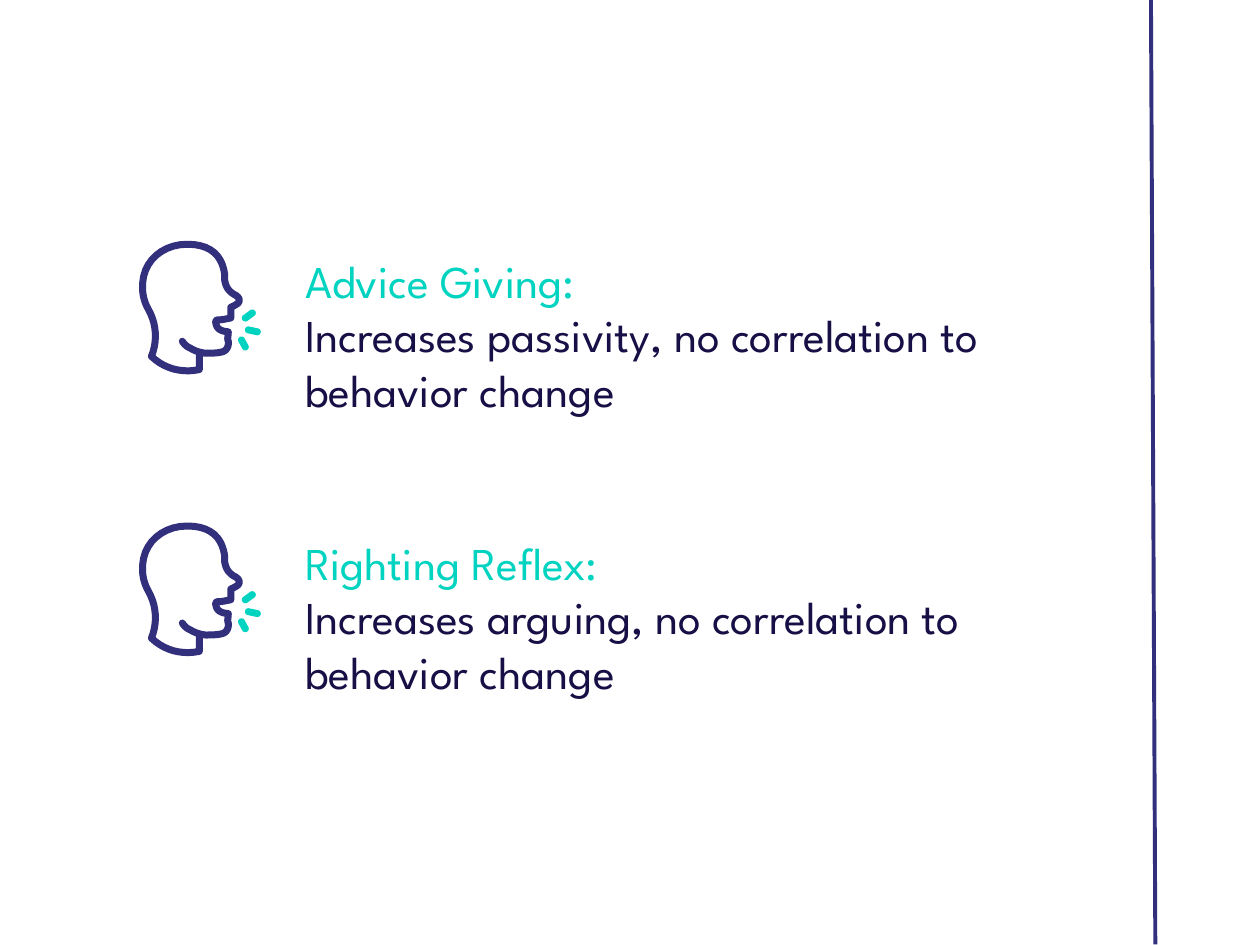
import math
from dataclasses import dataclass

from lxml import etree
from pptx import Presentation
from pptx.dml.color import RGBColor
from pptx.enum import shapes, text
from pptx.oxml import ns
from pptx.util import Pt


@dataclass(frozen=True)
class Theme:
    navy: RGBColor = RGBColor(0x32, 0x2F, 0x7C)
    teal: RGBColor = RGBColor(0x00, 0xD3, 0xC0)
    ink: RGBColor = RGBColor(0x17, 0x10, 0x46)
    font: str = "League Spartan"
    text_size: float = 26
    rule_width: float = 2.25
    icon_stroke: float = 4


THEME = Theme()

TOPICS = [
    ("Advice Giving:", "Increases passivity, no correlation to behavior change"),
    ("Righting Reflex:", "Increases arguing, no correlation to behavior change"),
]
FIRST_TOP, ROW_PITCH = 141, 161
TEXT_LEFT, TEXT_WIDTH, TEXT_HEIGHT = 167.3, 461, 101.5
ICON_LEFT, ICON_RISE = 78.3, 5

# Icon drawing: points in units of 0.72 pt from the icon's top left corner.
# A pair is a straight segment; six numbers are a Bezier segment.
ICON_UNIT = 0.72
HEAD_START = (36, 82)
HEAD_SEGMENTS = [
    # Jaw and chin
    (38, 85, 40, 86.5, 42.5, 87.5),
    (45.5, 89.5, 50, 91, 54.5, 91.5),
    (59, 91.5, 63, 91.5, 67.5, 90.5),
    (71, 89.5, 73, 86.5, 72.5, 82),
    # Open mouth
    (71.5, 80, 72.5, 78, 72.5, 74.5),
    (65, 74, 63, 71, 62.5, 67),
    (62.5, 65, 64, 65, 65, 65),
    (68, 65, 72, 64, 74.5, 63.5),
    (74.5, 55),
    # Nose and brow
    (77, 54, 78.5, 53, 80, 52),
    (81.5, 50.5, 81.5, 48.5, 80.5, 47.5),
    (80, 46.5, 79, 46, 78.5, 45.5),
    (73, 43, 70, 38.5, 69.5, 32),
    (69.5, 28),
    # Skull and neck
    (67.5, 15, 59.5, 5, 40, 5),
    (20.5, 5, 5.5, 18, 4.5, 36),
    (4, 43.5, 5.5, 50.5, 9, 56.5),
    (15.5, 68, 16.5, 81.5, 11.5, 94),
    (21.5, 103.5, 35, 107.5, 49.5, 104.5),
    (49.5, 93),
]
VOICE_RAYS = [
    [(88.5, 73), (95.5, 74.5)],
    [(83, 81), (86, 86.5)],
    [(86, 63.5), (91.5, 59.5)],
]


def trace(start, segments, steps=10):
    """Turn straight and Bezier segments into a list of points."""
    points = [start]
    for segment in segments:
        if len(segment) == 2:
            points.append(segment)
            continue
        x0, y0 = points[-1]
        x1, y1, x2, y2, x3, y3 = segment
        for step in range(1, steps + 1):
            t = step / steps
            a, b, c, d = (1 - t) ** 3, 3 * t * (1 - t) ** 2, 3 * t**2 * (1 - t), t**3
            points.append((a * x0 + b * x1 + c * x2 + d * x3,
                           a * y0 + b * y1 + c * y2 + d * y3))
    return points


def capsule(start, end, steps=10):
    """Outline a round-ended bar between two points."""
    radius = THEME.icon_stroke / ICON_UNIT / 2
    heading = math.atan2(end[1] - start[1], end[0] - start[0])
    points = []
    for (x, y), facing in ((end, heading), (start, heading + math.pi)):
        for step in range(steps + 1):
            angle = facing - math.pi / 2 + math.pi * step / steps
            points.append((x + radius * math.cos(angle), y + radius * math.sin(angle)))
    return points


def add_outline(icon, points, left, top, close):
    placed = [(Pt(left + x * ICON_UNIT), Pt(top + y * ICON_UNIT)) for x, y in points]
    builder = icon.shapes.build_freeform(*placed[0])
    builder.add_line_segments(placed[1:], close=close)
    outline = builder.convert_to_shape()
    outline.shadow.inherit = False
    return outline


def add_voice_ray(icon, ends, left, top):
    ray = add_outline(icon, capsule(*ends), left, top, close=True)
    ray.fill.solid()
    ray.fill.fore_color.rgb = THEME.teal
    ray.line.fill.background()


def add_head(icon, left, top):
    head = add_outline(icon, trace(HEAD_START, HEAD_SEGMENTS), left, top, close=False)
    head.fill.background()
    head.line.color.rgb = THEME.navy
    head.line.width = Pt(THEME.icon_stroke)
    stroke = head.line._get_or_add_ln()
    stroke.set("cap", "rnd")
    etree.SubElement(stroke, ns.qn("a:round"))


def add_speaker_icon(slide, left, top):
    icon = slide.shapes.add_group_shape()
    for ends in VOICE_RAYS:
        add_voice_ray(icon, ends, left, top)
    add_head(icon, left, top)


def add_topic_text(slide, top, heading, effect):
    topic = slide.shapes.add_textbox(Pt(TEXT_LEFT), Pt(top), Pt(TEXT_WIDTH), Pt(TEXT_HEIGHT))
    frame = topic.text_frame
    frame.word_wrap = True
    frame.auto_size = text.MSO_AUTO_SIZE.SHAPE_TO_FIT_TEXT
    lines = [(heading, THEME.teal), (effect, THEME.ink)]
    for index, (wording, color) in enumerate(lines):
        paragraph = frame.add_paragraph() if index else frame.paragraphs[0]
        run = paragraph.add_run()
        run.text = wording
        run.font.name = THEME.font
        run.font.size = Pt(THEME.text_size)
        run.font.color.rgb = color


def add_side_rule(slide):
    rule = slide.shapes.add_connector(
        shapes.MSO_CONNECTOR.STRAIGHT, Pt(657.7), Pt(0), Pt(660.2), Pt(539.7))
    rule.line.color.rgb = THEME.navy
    rule.line.width = Pt(THEME.rule_width)
    etree.SubElement(rule._element.spPr, ns.qn("a:effectLst"))


def main():
    deck = Presentation()
    deck.slide_width, deck.slide_height = Pt(720), Pt(540)
    slide = deck.slides.add_slide(deck.slide_layouts[6])

    # Rule along the right edge
    add_side_rule(slide)

    # One row for each topic: text with its speaker icon
    for row, (heading, effect) in enumerate(TOPICS):
        top = FIRST_TOP + row * ROW_PITCH
        add_topic_text(slide, top, heading, effect)
        add_speaker_icon(slide, ICON_LEFT, top - ICON_RISE)

    deck.save("out.pptx")


if __name__ == "__main__":
    main()
